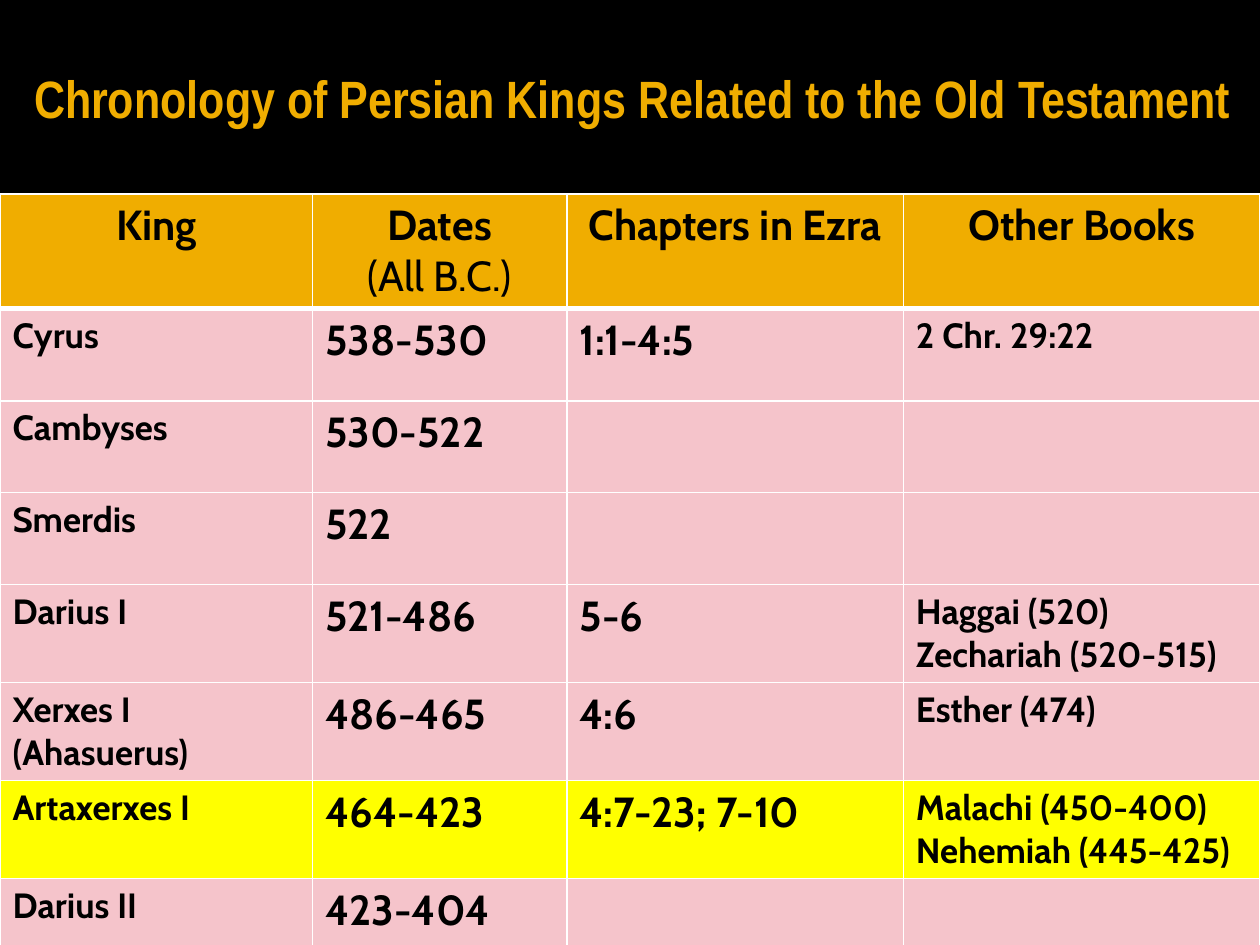
from lxml.etree import SubElement
from pptx import Presentation
from pptx.dml.color import RGBColor
from pptx.enum.shapes import MSO_SHAPE as Shape
from pptx.enum.text import MSO_ANCHOR as Anchor, MSO_AUTO_SIZE as Fit, PP_ALIGN as Align
from pptx.oxml.ns import qn
from pptx.util import Inches, Pt

BLACK = RGBColor(0x00, 0x00, 0x00)
WHITE = RGBColor(0xFF, 0xFF, 0xFF)
GOLD = RGBColor(0xF0, 0xAD, 0x00)
PINK = RGBColor(0xF5, 0xC4, 0xCB)
YELLOW = RGBColor(0xFF, 0xFF, 0x00)

WIDTH, HEIGHT = 10, 7.5
TOP = 1.54
COLS = [2.48, 2.02, 2.67, 2.83]
HEAD_ROW, BODY_ROW = 0.9, 0.73
SIZES = [20, 24, 24, 20]

# One list per cell: each item is a paragraph, "\n" is a line break
HEAD = [["King"], ["Dates", "(All B.C.)"], ["Chapters in Ezra"], ["Other Books"]]
KINGS = [
    [["Cyrus"], ["538-530"], ["1:1-4:5"], ["2 Chr. 29:22"]],
    [["Cambyses"], ["530-522"], [], []],
    [["Smerdis"], ["522"], [], []],
    [["Darius I"], ["521-486"], ["5-6"], ["Haggai (520)", "Zechariah (520-515)"]],
    [["Xerxes I\n(Ahasuerus)"], ["486-465"], ["4:6"], ["Esther (474)"]],
    [["Artaxerxes I"], ["464-423"], ["4:7-23; 7-10"],
     ["Malachi (450-400)", "Nehemiah (445-425)"]],
    [["Darius II"], ["423-404"], [], []],
]
MARKED = "Artaxerxes I"


class Deck:
    title_font, body_font = "Arial Narrow", "Cabin"

    def __init__(self):
        self.prs = Presentation()
        self.prs.slide_width, self.prs.slide_height = Inches(WIDTH), Inches(HEIGHT)
        self.slide = self.prs.slides.add_slide(self.prs.slide_layouts[5])

    def run(self, para, text, font, size, color, bold=True):
        run = para.add_run()
        run.text = text
        run.font.name, run.font.size = font, Pt(size)
        run.font.bold, run.font.color.rgb = bold, color

    def band(self, height, color):
        box = self.slide.shapes.add_shape(
            Shape.RECTANGLE, 0, 0, self.prs.slide_width, Inches(height))
        box.shadow.inherit = False
        box.fill.solid()
        box.fill.fore_color.rgb = color
        box.line.fill.background()

    def title(self, text):
        head = self.slide.shapes.title
        head.left, head.top = Inches(0.17), 0
        head.width, head.height = self.prs.slide_width, Inches(TOP)
        # Bring the title in front of the band
        self.slide.shapes.element.append(head.element)
        frame = head.text_frame
        frame.word_wrap, frame.auto_size = True, Fit.NONE
        frame.vertical_anchor = Anchor.MIDDLE
        frame.margin_left = Inches(0.1)
        frame.margin_right = frame.margin_top = frame.margin_bottom = Inches(0.05)
        para = frame.paragraphs[0]
        para.alignment = Align.LEFT
        self.run(para, text, self.title_font, 30, GOLD)

    def border(self, cell, low, high):
        props = cell._tc.get_or_add_tcPr()
        for side, width in zip("LRTB", (1, 1, high, low)):
            line = SubElement(props, qn(f"a:ln{side}"), w=str(Pt(width)))
            fill = SubElement(line, qn("a:solidFill"))
            SubElement(fill, qn("a:srgbClr"), val=str(WHITE))

    def cell(self, cell, paras, size, color, align, low=1, high=1):
        self.border(cell, low, high)
        cell.fill.solid()
        cell.fill.fore_color.rgb = color
        frame = cell.text_frame
        for i, text in enumerate(paras):
            para = frame.add_paragraph() if i else frame.paragraphs[0]
            para.alignment = align
            for j, part in enumerate(text.split("\n")):
                if j:
                    para.add_line_break()
                bold = not part.startswith("(All")
                self.run(para, part, self.body_font, size, BLACK, bold)

    def table(self, head, rows):
        tall = HEAD_ROW + BODY_ROW * len(rows)
        grid = self.slide.shapes.add_table(
            len(rows) + 1, len(COLS), 0, Inches(TOP),
            Inches(sum(COLS)), Inches(tall)).table
        for col, width in zip(grid.columns, COLS):
            col.width = Inches(width)
        for i, row in enumerate(grid.rows):
            row.height = Inches(BODY_ROW if i else HEAD_ROW)
        for c, paras in enumerate(head):
            self.cell(grid.cell(0, c), paras, 24, GOLD, Align.CENTER, low=3)
        for r, row in enumerate(rows, 1):
            color = YELLOW if MARKED in row[0] else PINK
            for c, paras in enumerate(row):
                self.cell(grid.cell(r, c), paras, SIZES[c], color, Align.LEFT,
                          high=3 if r == 1 else 1)


def main():
    deck = Deck()
    # Title on its black band
    deck.band(1.57, BLACK)
    deck.title("Chronology of Persian Kings Related to the Old Testament")
    # Kings, dates and books
    deck.table(HEAD, KINGS)
    deck.prs.save("out.pptx")


if __name__ == "__main__":
    main()
